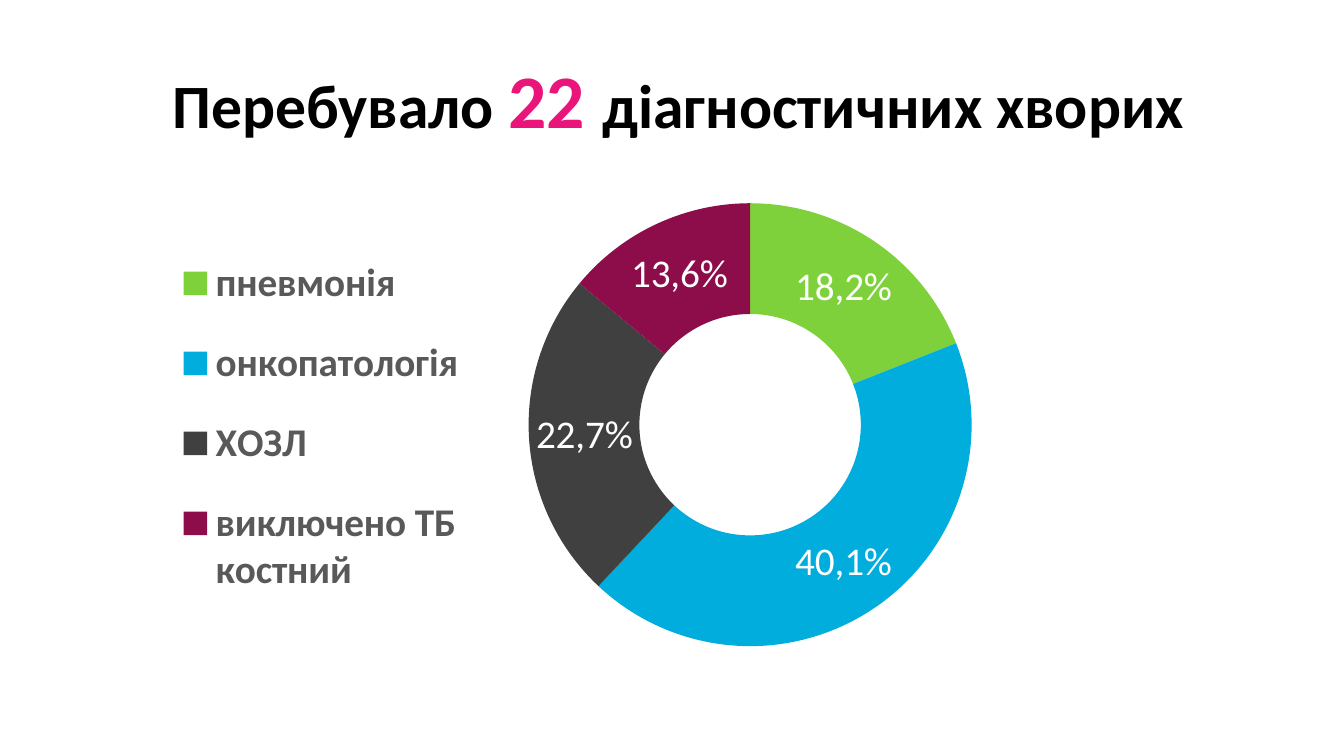
from lxml.etree import SubElement
from pptx import Presentation
from pptx.chart.data import CategoryChartData
from pptx.dml.color import RGBColor
from pptx.enum.chart import XL_CHART_TYPE as ChartType, XL_LEGEND_POSITION as LegendPos
from pptx.enum.text import MSO_ANCHOR as Anchor, PP_ALIGN as Align
from pptx.oxml.ns import qn
from pptx.util import Inches, Pt

BLACK = RGBColor(0x00, 0x00, 0x00)
WHITE = RGBColor(0xFF, 0xFF, 0xFF)
GREY = RGBColor(0x59, 0x59, 0x59)
PINK = RGBColor(0xEA, 0x15, 0x7A)
GREEN = RGBColor(0x7F, 0xD1, 0x3B)
BLUE = RGBColor(0x00, 0xAD, 0xDC)
CHARCOAL = RGBColor(0x40, 0x40, 0x40)
WINE = RGBColor(0x8C, 0x0D, 0x49)

DIAGNOSES = [
    ("пневмонія", 19, "18,2%", GREEN),
    ("онкопатологія", 43, "40,1%", BLUE),
    ("ХОЗЛ", 24, "22,7%", CHARCOAL),
    ("виключено ТБ костний", 14, "13,6%", WINE),
]


class Deck:
    font_name = "Calibri"

    def __init__(self, width, height):
        self.prs = Presentation()
        self.prs.slide_width = Inches(width)
        self.prs.slide_height = Inches(height)
        self.s = self.prs.slides.add_slide(self.prs.slide_layouts[5])

    def box(self, x, y, w, h):
        sw, sh = self.prs.slide_width, self.prs.slide_height
        return int(x * sw), int(y * sh), int(w * sw), int(h * sh)

    def style(self, font, size, color, bold=False):
        font.name = self.font_name
        font.size = Pt(size)
        font.bold = bold
        font.color.rgb = color

    def title(self, share, runs):
        sp = self.s.shapes.title
        sp.left, sp.top, sp.width, sp.height = self.box(*share)
        tf = sp.text_frame
        tf.word_wrap = True
        tf.vertical_anchor = Anchor.MIDDLE
        p = tf.paragraphs[0]
        p.alignment = Align.CENTER
        for text, size, color in runs:
            r = p.add_run()
            r.text = text
            self.style(r.font, size, color, bold=True)

    def place(self, parent, index, share, inner=False):
        for old in parent.findall(qn("c:layout")):
            parent.remove(old)
        layout = SubElement(parent, qn("c:layout"))
        parent.insert(index, layout)
        manual = SubElement(layout, qn("c:manualLayout"))
        settings = [("layoutTarget", "inner")] if inner else []
        settings += [("xMode", "edge"), ("yMode", "edge")]
        settings += zip("xywh", share)
        for tag, value in settings:
            SubElement(manual, qn(f"c:{tag}")).set("val", str(value))

    def doughnut(self, share, rows, plot_share, legend_share):
        names, values, labels, colors = zip(*rows)
        data = CategoryChartData()
        data.categories = names
        data.add_series("Series 1", values)
        chart = self.s.shapes.add_chart(
            ChartType.DOUGHNUT, *self.box(*share), data).chart
        self.style(chart.font, 10, BLACK)
        chart.has_title = False
        chart.has_legend = True
        legend = chart.legend
        legend.position = LegendPos.LEFT
        legend.include_in_layout = False
        self.style(legend.font, 28, GREY, bold=True)
        self.place(legend._element, 1, legend_share)
        plot = chart.plots[0]
        plot.vary_by_categories = True
        self.place(chart._chartSpace.chart.plotArea, 0, plot_share, inner=True)
        for i, (label, color) in enumerate(zip(labels, colors)):
            point = plot.series[0].points[i]
            point.format.fill.solid()
            point.format.fill.fore_color.rgb = color
            p = point.data_label.text_frame.paragraphs[0]
            r = p.add_run()
            r.text = label
            self.style(r.font, 28, WHITE)

    def save(self):
        self.prs.save("out.pptx")


def main():
    deck = Deck(13.33, 7.5)
    deck.title((0.09, 0.05, 0.83, 0.16), [
        ("Перебувало ", 44, BLACK),
        ("22 ", 54, PINK),
        ("діагностичних хворих", 44, BLACK),
    ])
    deck.doughnut((0.11, 0.25, 0.83, 0.63), DIAGNOSES,
                  plot_share=(0.34, 0.03, 0.4, 0.93),
                  legend_share=(0.02, 0.08, 0.27, 0.84))
    deck.save()


if __name__ == "__main__":
    main()
